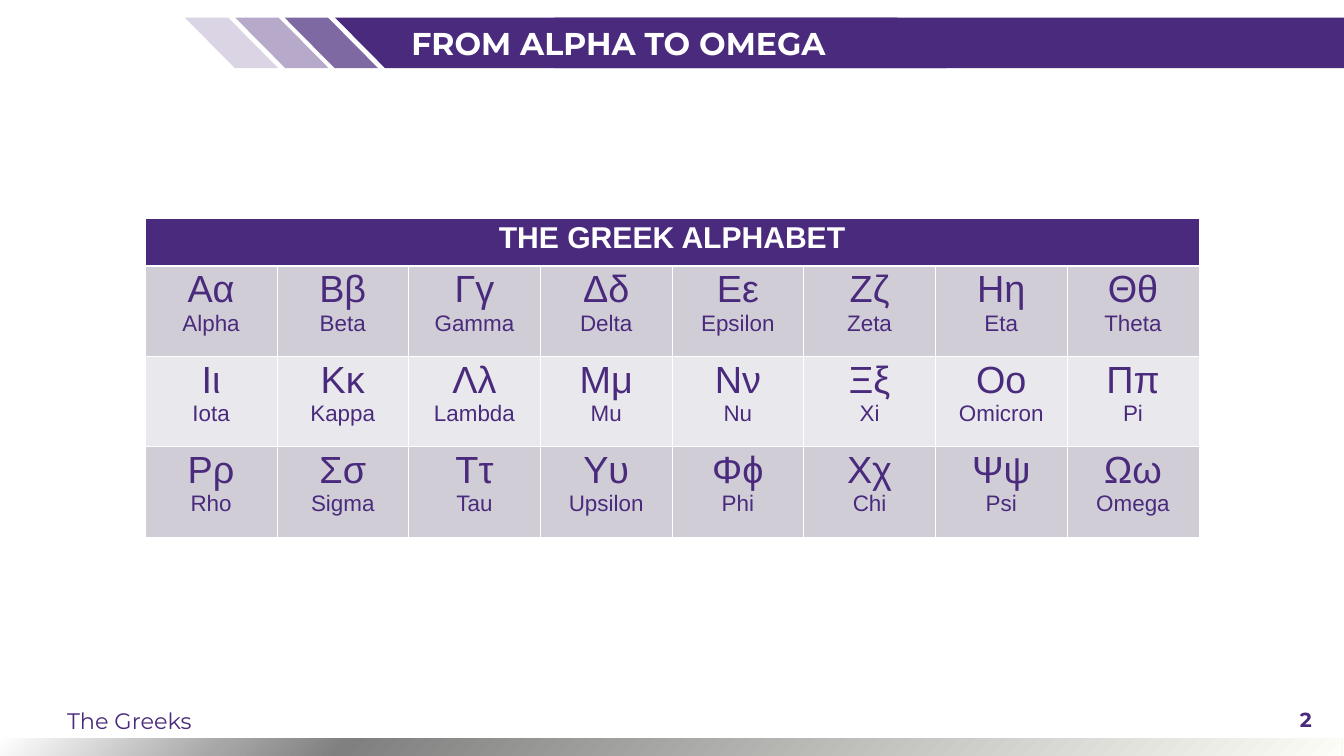
from dataclasses import dataclass

from lxml import etree
from pptx import Presentation
from pptx.dml.color import RGBColor
from pptx.enum.shapes import MSO_SHAPE
from pptx.enum.text import MSO_ANCHOR, PP_ALIGN
from pptx.oxml import parse_xml
from pptx.oxml.ns import qn
from pptx.util import Cm, Pt

RECT, SLANT = MSO_SHAPE.RECTANGLE, MSO_SHAPE.PARALLELOGRAM
TOP, MIDDLE = MSO_ANCHOR.TOP, MSO_ANCHOR.MIDDLE
LEFT, CENTER, RIGHT = PP_ALIGN.LEFT, PP_ALIGN.CENTER, PP_ALIGN.RIGHT

PURPLE = RGBColor(0x4A, 0x2A, 0x7C)
WHITE = RGBColor(0xFF, 0xFF, 0xFF)
BANDS = RGBColor(0xD0, 0xCD, 0xD7), RGBColor(0xE9, 0xE8, 0xEC)
HEAD, BODY = "Montserrat", "Arial"
A_NS = "http://schemas.openxmlformats.org/drawingml/2006/main"

STOPS = (0, "FCFDF6"), (74, "808080"), (83, "A6A6A6"), (100, "FFFFFF")
LETTERS = (
    "Αα Alpha Ββ Beta Γγ Gamma Δδ Delta Εε Epsilon Ζζ Zeta Ηη Eta Θθ Theta",
    "Ιι Iota Κκ Kappa Λλ Lambda Μμ Mu Νν Nu Ξξ Xi Οο Omicron Ππ Pi",
    "Ρρ Rho Σσ Sigma Ττ Tau Υυ Upsilon Φϕ Phi Χχ Chi Ψψ Psi Ωω Omega",
)
COLS = 8


@dataclass
class Box:
    x: float
    y: float
    w: float
    h: float

    def place(self) -> tuple:
        return Cm(self.x), Cm(self.y), Cm(self.w), Cm(self.h)


@dataclass
class Style:
    size: float
    font: str = BODY
    color: RGBColor = PURPLE
    bold: bool = False


@dataclass
class Label:
    text: str
    box: Box
    style: Style
    align: PP_ALIGN = LEFT
    anchor: MSO_ANCHOR = MIDDLE


@dataclass
class Stripe:
    x: float
    w: float
    alpha: int


TITLE = Style(45, HEAD, WHITE, True)
LABELS = (
    Label("FROM ALPHA TO OMEGA", Box(20.12, 0.89, 45.52, 2.41), TITLE, anchor=TOP),
    Label("2", Box(53.67, 35.26, 13.06, 2.03), Style(29, HEAD, bold=True), RIGHT),
    Label("The Greeks", Box(2.77, 35.31, 49.96, 2.03), Style(32, HEAD)),
)
STRIPES = (Stripe(16.89, 30.84, 100), Stripe(14.35, 4.7, 70),
           Stripe(11.86, 4.7, 40), Stripe(9.32, 4.7, 20))


def add_run(para, text: str, style: Style, align: PP_ALIGN) -> None:
    para.alignment = align
    run = para.add_run()
    run.text = text
    font = run.font
    font.name, font.size, font.bold = style.font, Pt(style.size), style.bold
    font.color.rgb = style.color


def add_block(slide, kind: MSO_SHAPE, box: Box):
    shape = slide.shapes.add_shape(kind, *box.place())
    shape.shadow.inherit = False
    shape.line.fill.background()
    shape.fill.solid()
    shape.fill.fore_color.rgb = PURPLE
    return shape


def add_stripe(slide, stripe: Stripe) -> None:
    """Draw a slanted band whose top leans to the left."""
    shape = add_block(slide, SLANT, Box(stripe.x, 0.89, stripe.w, 2.54))
    shape.adjustments[0] = 0.99
    shape.element.spPr.xfrm.set("flipH", "1")
    if stripe.alpha < 100:
        color = shape.element.spPr.find(".//" + qn("a:srgbClr"))
        etree.SubElement(color, qn("a:alpha"), val=str(stripe.alpha * 1000))


def add_glow(slide) -> None:
    """Draw the foot bar, shaded from its lower right corner."""
    shape = add_block(slide, RECT, Box(-0.08, 37.21, 67.74, 0.89))
    stops = "".join(f'<a:gs pos="{pos * 1000}"><a:srgbClr val="{color}"/></a:gs>'
                    for pos, color in STOPS)
    grad = parse_xml(
        f'<a:gradFill xmlns:a="{A_NS}" rotWithShape="1"><a:gsLst>{stops}</a:gsLst>'
        '<a:path path="circle"><a:fillToRect l="100000" t="100000"/></a:path>'
        '</a:gradFill>')
    props = shape.element.spPr
    props.replace(props.find(qn("a:solidFill")), grad)


def add_label(slide, label: Label) -> None:
    frame = slide.shapes.add_textbox(*label.box.place()).text_frame
    frame.word_wrap = True
    frame.vertical_anchor = label.anchor
    frame.margin_left = frame.margin_right = Cm(0.61)
    frame.margin_top = frame.margin_bottom = Cm(0.3)
    add_run(frame.paragraphs[0], label.text, label.style, label.align)


def dress(cell, color: RGBColor, base: int = 1) -> None:
    """Give a cell white borders and a fill; base is the bottom line in points."""
    props = cell._tc.get_or_add_tcPr()
    for side, width in zip("LRTB", (1, 1, 1, base)):
        props.append(parse_xml(
            f'<a:ln{side} xmlns:a="{A_NS}" w="{Pt(width)}"><a:solidFill>'
            f'<a:srgbClr val="{WHITE}"/></a:solidFill></a:ln{side}>'))
    cell.fill.solid()
    cell.fill.fore_color.rgb = color


def add_grid(slide) -> None:
    box = Box(7.32, 11, 53.11, 16.08)
    table = slide.shapes.add_table(len(LETTERS) + 1, COLS, *box.place()).table
    for col in table.columns:
        col.width = Cm(box.w / COLS)
    for i, row in enumerate(table.rows):
        row.height = Cm(4.55 if i else 2.41)
    for i in range(COLS):
        dress(table.cell(0, i), PURPLE, 3)
    top = table.cell(0, 0)
    top.merge(table.cell(0, COLS - 1))
    add_run(top.text_frame.paragraphs[0], "THE GREEK ALPHABET",
            Style(43, color=WHITE, bold=True), CENTER)
    for r, line in enumerate(LETTERS):
        words = line.split()
        for c, (sign, name) in enumerate(zip(words[::2], words[1::2])):
            cell = table.cell(r + 1, c)
            dress(cell, BANDS[r % 2])
            frame = cell.text_frame
            add_run(frame.paragraphs[0], sign, Style(54), CENTER)
            add_run(frame.add_paragraph(), name, Style(32), CENTER)


def main() -> None:
    deck = Presentation()
    deck.slide_width, deck.slide_height = Cm(67.74), Cm(38.1)
    slide = deck.slides.add_slide(deck.slide_layouts[6])
    add_glow(slide)
    for stripe in STRIPES:
        add_stripe(slide, stripe)
    add_block(slide, RECT, Box(27.94, 0.89, 39.8, 2.54))
    for label in LABELS:
        add_label(slide, label)
    add_grid(slide)
    deck.save("out.pptx")


if __name__ == "__main__":
    main()
